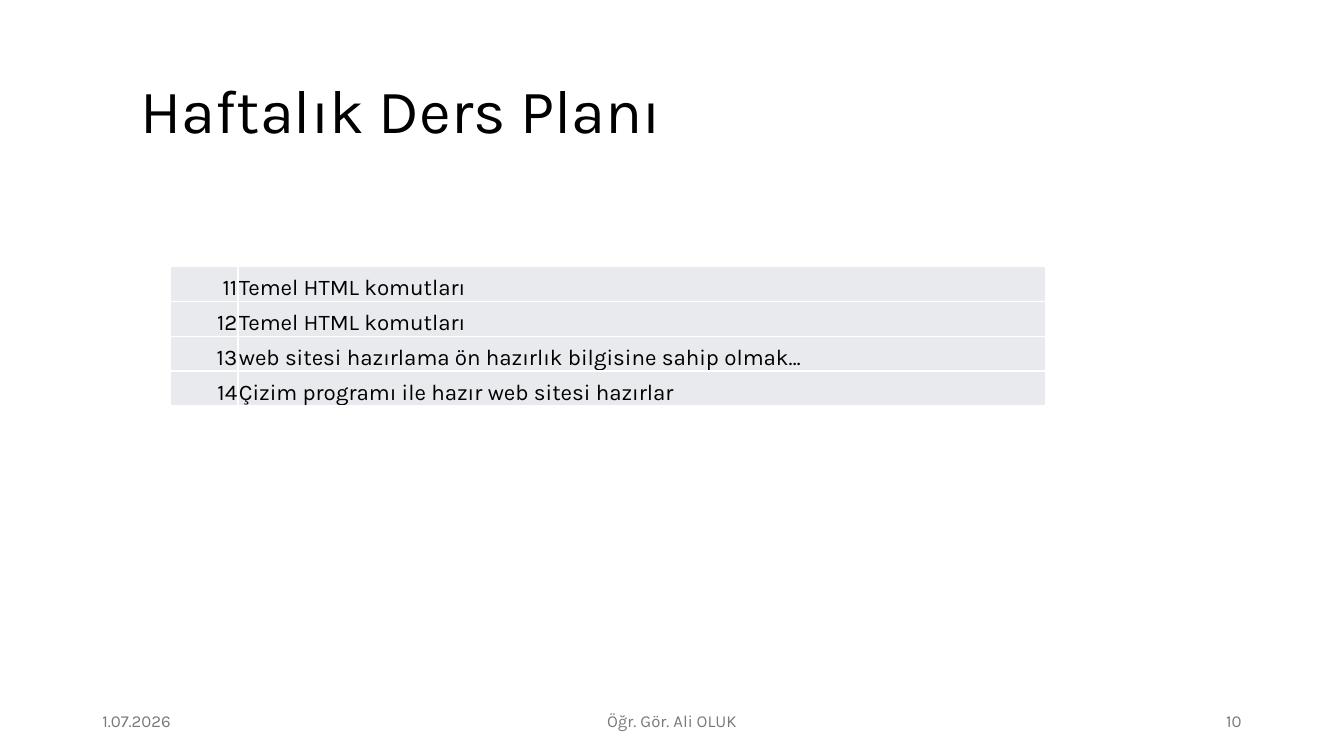
from lxml.etree import SubElement
from pptx import Presentation
from pptx.dml.color import RGBColor
from pptx.enum.text import MSO_ANCHOR, PP_ALIGN
from pptx.oxml.ns import qn
from pptx.util import Cm, Pt


def write_text(text_frame, text, size=16, color="000000", align=PP_ALIGN.LEFT, line_spacing=1.0):
    paragraph = text_frame.paragraphs[0]
    paragraph.alignment = align
    paragraph.line_spacing = line_spacing
    run = paragraph.add_run()
    run.text = text
    run.font.name = "Karla"
    run.font.size = Pt(size)
    run.font.color.rgb = RGBColor.from_string(color)


def add_text(slide, text, left, top, width, height, **text_format):
    text_frame = slide.shapes.add_textbox(Cm(left), Cm(top), Cm(width), Cm(height)).text_frame
    text_frame.word_wrap = True
    text_frame.vertical_anchor = MSO_ANCHOR.MIDDLE
    write_text(text_frame, text, **text_format)


presentation = Presentation()
presentation.slide_width = Cm(33.87)
presentation.slide_height = Cm(19.05)
slide = presentation.slides.add_slide(presentation.slide_layouts[6])

# Title
add_text(slide, "Haftalık Ders Planı", 3.3, 1.01, 28.25, 3.68, size=44, line_spacing=0.9)

# Weekly plan table
first_week = 11
topics = [
    "Temel HTML komutları",
    "Temel HTML komutları",
    "web sitesi hazırlama ön hazırlık bilgisine sahip olmak…",
    "Çizim programı ile hazır web sitesi hazırlar",
]
column_widths = [1.7, 20.35]
row_height = 0.88
plan = slide.shapes.add_table(
    len(topics), len(column_widths), Cm(4.3), Cm(6.71),
    Cm(sum(column_widths)), Cm(row_height * len(topics)),
).table
plan.first_row = False
plan.horz_banding = False
for column, width in zip(plan.columns, column_widths):
    column.width = Cm(width)

for row_index, topic in enumerate(topics):
    plan.rows[row_index].height = Cm(row_height)
    week = str(first_week + row_index)
    for column_index, (text, align) in enumerate([(week, PP_ALIGN.RIGHT), (topic, PP_ALIGN.LEFT)]):
        cell = plan.cell(row_index, column_index)
        cell.margin_left = cell.margin_right = cell.margin_top = Cm(0.02)
        cell.margin_bottom = Cm(0)
        cell.vertical_anchor = MSO_ANCHOR.BOTTOM
        write_text(cell.text_frame, text, align=align)
        # White cell borders go before the fill
        properties = cell._tc.get_or_add_tcPr()
        for side in ("a:lnL", "a:lnR", "a:lnT", "a:lnB"):
            border = SubElement(properties, qn(side), w=str(Pt(1)))
            border_fill = SubElement(border, qn("a:solidFill"))
            SubElement(border_fill, qn("a:srgbClr"), val="FFFFFF")
        cell.fill.solid()
        cell.fill.fore_color.rgb = RGBColor.from_string("E8EAED")

# Footer: date, lecturer, slide number
footer = [
    ("1.07.2026", 2.33, 7.62, PP_ALIGN.LEFT),
    ("Öğr. Gör. Ali OLUK", 11.22, 11.43, PP_ALIGN.CENTER),
    ("10", 23.92, 7.62, PP_ALIGN.RIGHT),
]
for text, left, width, align in footer:
    add_text(slide, text, left, 17.66, width, 1.01, size=12, color="797979", align=align)

presentation.save("out.pptx")
